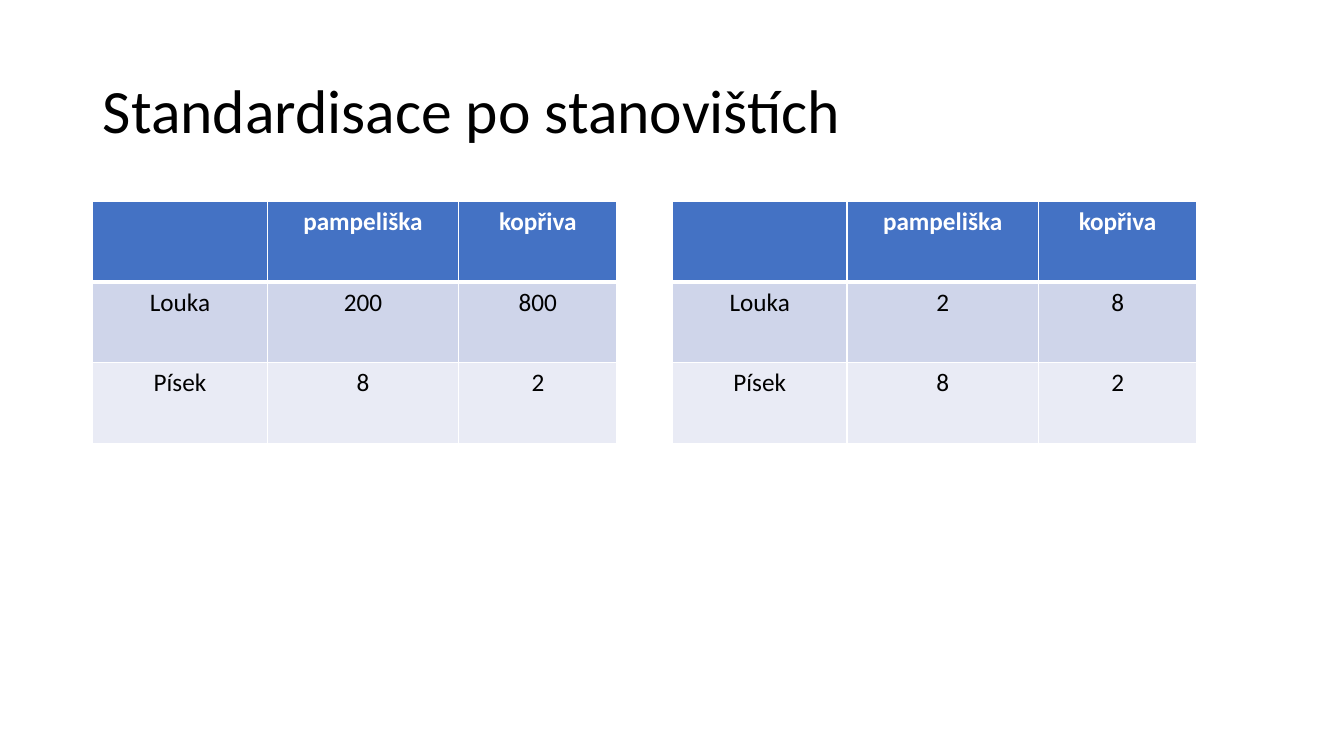
from lxml import etree
from pptx import Presentation
from pptx import util as u
from pptx.dml.color import RGBColor
from pptx.enum import text
from pptx.oxml import ns

# Content
TITLE = "Standardisace po stanovištích"
HEADER = ["", "pampeliška", "kopřiva"]
RAW_COUNTS = [HEADER, ["Louka", "200", "800"], ["Písek", "8", "2"]]
STANDARDISED = [HEADER, ["Louka", "2", "8"], ["Písek", "8", "2"]]

# Look and grid
COLORS = {"header": "4472C4", "odd": "CFD5EA", "even": "E9EBF5",
          "light": "FFFFFF", "dark": "000000"}
ROW_FILLS = ["header", "odd", "even"]
FONT = "Calibri"
SLIDE_W, SLIDE_H = 13.33, 7.5
MARGIN = 0.92
COLUMNS = [1.73, 1.9, 1.57]
ROW_H = 0.8
TABLE_TOP = 2
TABLE_GAP = 0.55
THIN, THICK = 1, 3


def style_font(font, size, color, bold=False):
    font.name, font.size, font.bold = FONT, u.Pt(size), bold
    font.color.rgb = RGBColor.from_string(COLORS[color])


def set_borders(cell, widths):
    """Draw the cell's edges; widths maps L, R, T, B to points."""
    properties = cell._tc.get_or_add_tcPr()
    for position, (side, width) in enumerate(widths.items()):
        line = etree.Element(ns.qn(f"a:ln{side}"), w=str(u.Pt(width)))
        fill = etree.SubElement(line, ns.qn("a:solidFill"))
        etree.SubElement(fill, ns.qn("a:srgbClr"), val=COLORS["light"])
        properties.insert(position, line)


def add_counts(slide, counts, left):
    frame = slide.shapes.add_table(
        len(counts), len(COLUMNS), u.Inches(left), u.Inches(TABLE_TOP),
        u.Inches(sum(COLUMNS)), u.Inches(ROW_H * len(counts)))
    table = frame.table
    for column, width in zip(table.columns, COLUMNS):
        column.width = u.Inches(width)
    for r, labels in enumerate(counts):
        table.rows[r].height = u.Inches(ROW_H)
        for c, label in enumerate(labels):
            cell = table.cell(r, c)
            cell.fill.solid()
            cell.fill.fore_color.rgb = RGBColor.from_string(COLORS[ROW_FILLS[r]])
            set_borders(cell, {"L": THIN, "R": THIN,
                               "T": THICK if r == 1 else THIN,
                               "B": THICK if r == 0 else THIN})
            cell.text_frame.text = label
            paragraph = cell.text_frame.paragraphs[0]
            paragraph.alignment = text.PP_ALIGN.CENTER
            style_font(paragraph.font, 18, "light" if r == 0 else "dark", r == 0)
            for run in paragraph.runs:
                style_font(run.font, 18, "light" if r == 0 else "dark", r == 0)


def main():
    deck = Presentation()
    deck.slide_width, deck.slide_height = u.Inches(SLIDE_W), u.Inches(SLIDE_H)
    slide = deck.slides.add_slide(deck.slide_layouts[5])

    # Title
    title = slide.shapes.title
    title.left, title.top = u.Inches(MARGIN), u.Inches(0.4)
    title.width, title.height = u.Inches(11.5), u.Inches(1.45)
    title.text_frame.text = TITLE
    title.text_frame.auto_size = text.MSO_AUTO_SIZE.NONE
    title.text_frame.vertical_anchor = text.MSO_ANCHOR.MIDDLE
    heading = title.text_frame.paragraphs[0]
    heading.alignment = text.PP_ALIGN.LEFT
    heading.line_spacing = 0.9
    style_font(heading.runs[0].font, 44, "dark")

    # Tables side by side
    for i, counts in enumerate([RAW_COUNTS, STANDARDISED]):
        add_counts(slide, counts, MARGIN + i * (sum(COLUMNS) + TABLE_GAP))

    deck.save("out.pptx")


if __name__ == "__main__":
    main()
